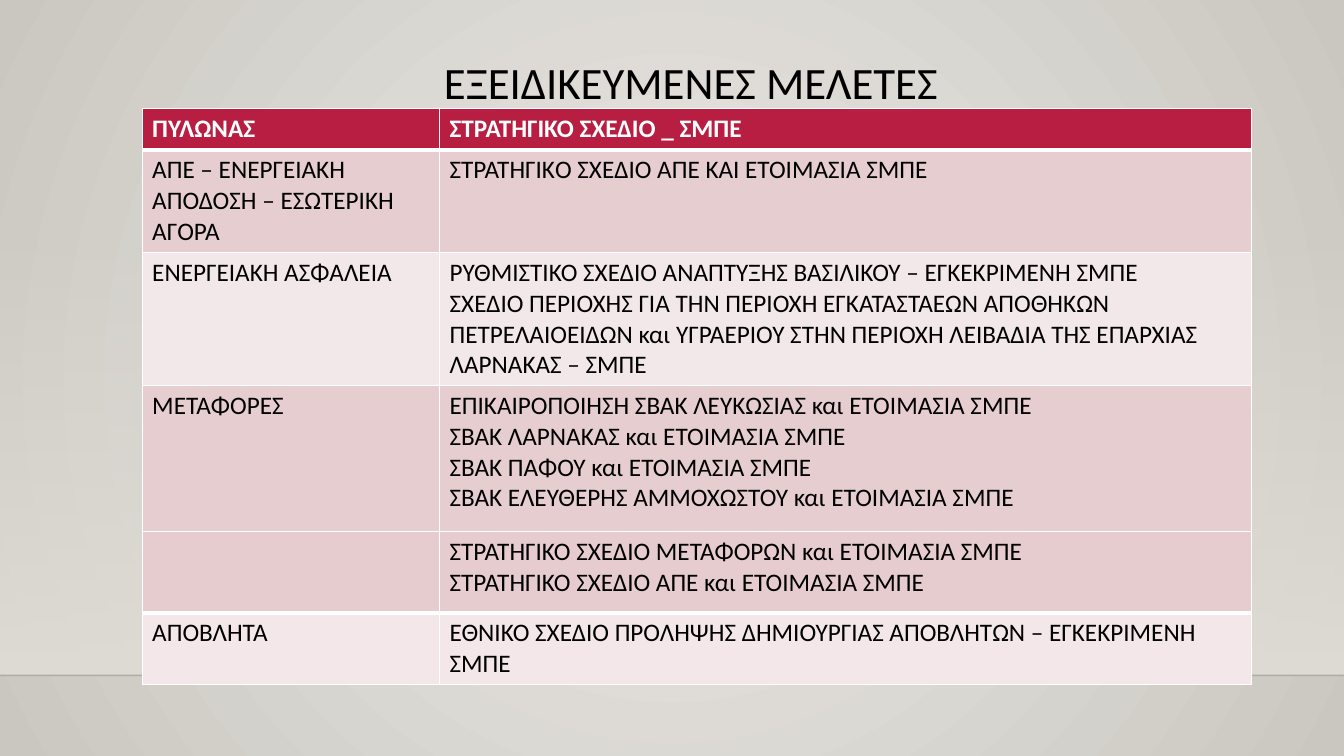
"""Build the slide on specialised studies, with one table per group of pillars."""
from pptx import Presentation
from pptx.dml.color import RGBColor
from pptx.enum.shapes import MSO_CONNECTOR, MSO_SHAPE
from pptx.enum.text import MSO_ANCHOR, PP_ALIGN
from pptx.oxml import parse_xml
from pptx.oxml.ns import qn
from pptx.util import Inches, Pt

BLACK = RGBColor(0x00, 0x00, 0x00)
WHITE = RGBColor(0xFF, 0xFF, 0xFF)
CRIMSON = RGBColor(0xB7, 0x1E, 0x42)
ROSE = RGBColor(0xE6, 0xCD, 0xCF)
PALE = RGBColor(0xF3, 0xE8, 0xE9)
ROSE_LOWER = RGBColor(0xE6, 0xCC, 0xCF)
PALE_LOWER = RGBColor(0xF3, 0xE7, 0xE9)
NS = 'xmlns:a="http://schemas.openxmlformats.org/drawingml/2006/main"'
RECT, STRAIGHT = MSO_SHAPE.RECTANGLE, MSO_CONNECTOR.STRAIGHT
TOP, CENTER = MSO_ANCHOR.TOP, PP_ALIGN.CENTER


def gradient(start, end, alpha, direction):
    return parse_xml(
        f'<a:gradFill {NS} rotWithShape="1"><a:gsLst>'
        f'<a:gs pos="0"><a:srgbClr val="{start}"><a:alpha val="{alpha}"/></a:srgbClr></a:gs>'
        f'<a:gs pos="100000"><a:srgbClr val="{end}"/></a:gs>'
        f'</a:gsLst>{direction}</a:gradFill>')


def style(p, size, color, bold=False):
    formats = {"name": "Calibri", "size": Pt(size), "bold": bold}
    for r in p.runs:
        for key, value in formats.items():
            setattr(r.font, key, value)
        r.font.color.rgb = color


prs = Presentation()
prs.slide_width, prs.slide_height = Inches(13.33), Inches(7.5)
s = prs.slides.add_slide(prs.slide_layouts[5])

s.background.fill.solid()
bg_pr = s.background._cSld.bg.bgPr
bg_pr.replace(bg_pr.find(qn("a:solidFill")), gradient(
    "ECEAE7", "CAC7C1", 100000,
    '<a:path path="circle"><a:fillToRect l="50000" t="50000" r="50000" b="50000"/></a:path>'))

sp = s.shapes.add_shape(RECT, Inches(0), Inches(2.21), Inches(13.33), Inches(4.49))
sp.shadow.inherit = False
sp.line.fill.background()
sp.fill.solid()
sp_pr = sp._element.spPr
sp_pr.replace(sp_pr.find(qn("a:solidFill")), gradient(
    "DFDBD5", "DFDBD5", 0, '<a:lin ang="5400000" scaled="0"/>'))

floor = s.shapes.add_connector(STRAIGHT, Inches(0), Inches(6.7), Inches(13.33), Inches(6.7))
floor.line.width = Pt(1)
floor.line.color.rgb = BLACK
floor.line._ln.find(".//" + qn("a:srgbClr")).append(parse_xml(f'<a:alpha {NS} val="20000"/>'))
floor._element.spPr.append(parse_xml(f"<a:effectLst {NS}/>"))

title = s.shapes.title
title.left, title.top = Inches(0.92), Inches(0.55)
title.width, title.height = Inches(11.87), Inches(1.15)
tf = title.text_frame
tf.text = "ΕΞΕΙΔΙΚΕΥΜΕΝΕΣ ΜΕΛΕΤΕΣ"
tf.vertical_anchor = TOP
tf.word_wrap = True
p = tf.paragraphs[0]
p.alignment, p.line_spacing = CENTER, 0.9
style(p, 32, BLACK)

# Each row: height, fill, bottom border in points, pillar, studies
UPPER = [
    (0.4, CRIMSON, 3, "ΠΥΛΩΝΑΣ", "ΣΤΡΑΤΗΓΙΚΟ ΣΧΕΔΙΟ _ ΣΜΠΕ"),
    (1.02, ROSE, 1, "ΑΠΕ – ΕΝΕΡΓΕΙΑΚΗ ΑΠΟΔΟΣΗ – ΕΣΩΤΕΡΙΚΗ ΑΓΟΡΑ",
     "ΣΤΡΑΤΗΓΙΚO ΣΧEΔΙΟ ΑΠΕ ΚΑΙ ΕΤΟΙΜΑΣΙΑ ΣΜΠΕ"),
    (1.32, PALE, 1, "ΕΝΕΡΓΕΙΑΚΗ ΑΣΦΑΛΕΙΑ",
     "ΡΥΘΜΙΣΤΙΚΟ ΣΧΕΔΙΟ ΑΝΑΠΤΥΞΗΣ ΒΑΣΙΛΙΚΟΥ – ΕΓΚΕΚΡΙΜΕΝΗ ΣΜΠΕ\n"
     "ΣΧΕΔΙΟ ΠΕΡΙΟΧΗΣ ΓΙΑ ΤΗΝ ΠΕΡΙΟΧΗ ΕΓΚΑΤΑΣΤΑΕΩΝ ΑΠΟΘΗΚΩΝ ΠΕΤΡΕΛΑΙΟΕΙΔΩΝ και "
     "ΥΓΡΑΕΡΙΟΥ ΣΤΗΝ ΠΕΡΙΟΧΗ ΛΕΙΒΑΔΙΑ ΤΗΣ ΕΠΑΡΧΙΑΣ ΛΑΡΝΑΚΑΣ – ΣΜΠΕ"),
    (1.45, ROSE, 1, "ΜΕΤΑΦΟΡΕΣ",
     "ΕΠΙΚΑΙΡΟΠΟΙΗΣΗ ΣΒΑΚ ΛΕΥΚΩΣΙΑΣ και ΕΤΟΙΜΑΣΙΑ ΣΜΠΕ\n"
     "ΣΒΑΚ ΛΑΡΝΑΚΑΣ και ΕΤΟΙΜΑΣΙΑ ΣΜΠΕ\n"
     "ΣΒΑΚ ΠΑΦΟΥ και ΕΤΟΙΜΑΣΙΑ ΣΜΠΕ\n"
     "ΣΒΑΚ ΕΛΕΥΘΕΡΗΣ ΑΜΜΟΧΩΣΤΟΥ και ΕΤΟΙΜΑΣΙΑ ΣΜΠΕ"),
]
LOWER = [
    (0.81, ROSE_LOWER, 3, "",
     "ΣΤΡΑΤΗΓΙΚΟ ΣΧΕΔΙΟ ΜΕΤΑΦΟΡΩΝ και ΕΤΟΙΜΑΣΙΑ ΣΜΠΕ\n"
     "ΣΤΡΑΤΗΓΙΚΟ ΣΧΕΔΙΟ ΑΠΕ και ΕΤΟΙΜΑΣΙΑ ΣΜΠΕ"),
    (0.7, PALE_LOWER, 1, "ΑΠΟΒΛΗΤΑ",
     "ΕΘΝΙΚΟ ΣΧΕΔΙΟ ΠΡΟΛΗΨΗΣ ΔΗΜΙΟΥΡΓΙΑΣ ΑΠΟΒΛΗΤΩΝ – ΕΓΚΕΚΡΙΜΕΝΗ ΣΜΠΕ"),
]

for top, rows in ((1.08, UPPER), (5.27, LOWER)):
    height = sum(row[0] for row in rows)
    table = s.shapes.add_table(len(rows), 2, Inches(1.41), Inches(top),
                               Inches(11), Inches(height)).table
    table.columns[0].width, table.columns[1].width = Inches(2.95), Inches(8.05)
    above = 1
    for i, (row_height, fill, below, *texts) in enumerate(rows):
        table.rows[i].height = Inches(row_height)
        header = fill == CRIMSON
        for cell, text in zip(table.rows[i].cells, texts):
            cell.text = text
            for p in cell.text_frame.paragraphs:
                style(p, 18, WHITE if header else BLACK, header)
            tc_pr = cell._tc.get_or_add_tcPr()
            for side, width in (("L", 1), ("R", 1), ("T", above), ("B", below)):
                tc_pr.append(parse_xml(
                    f'<a:ln{side} {NS} w="{Pt(width)}"><a:solidFill>'
                    f'<a:srgbClr val="{WHITE}"/></a:solidFill></a:ln{side}>'))
            cell.fill.solid()
            cell.fill.fore_color.rgb = fill
        above = below

prs.save("out.pptx")
